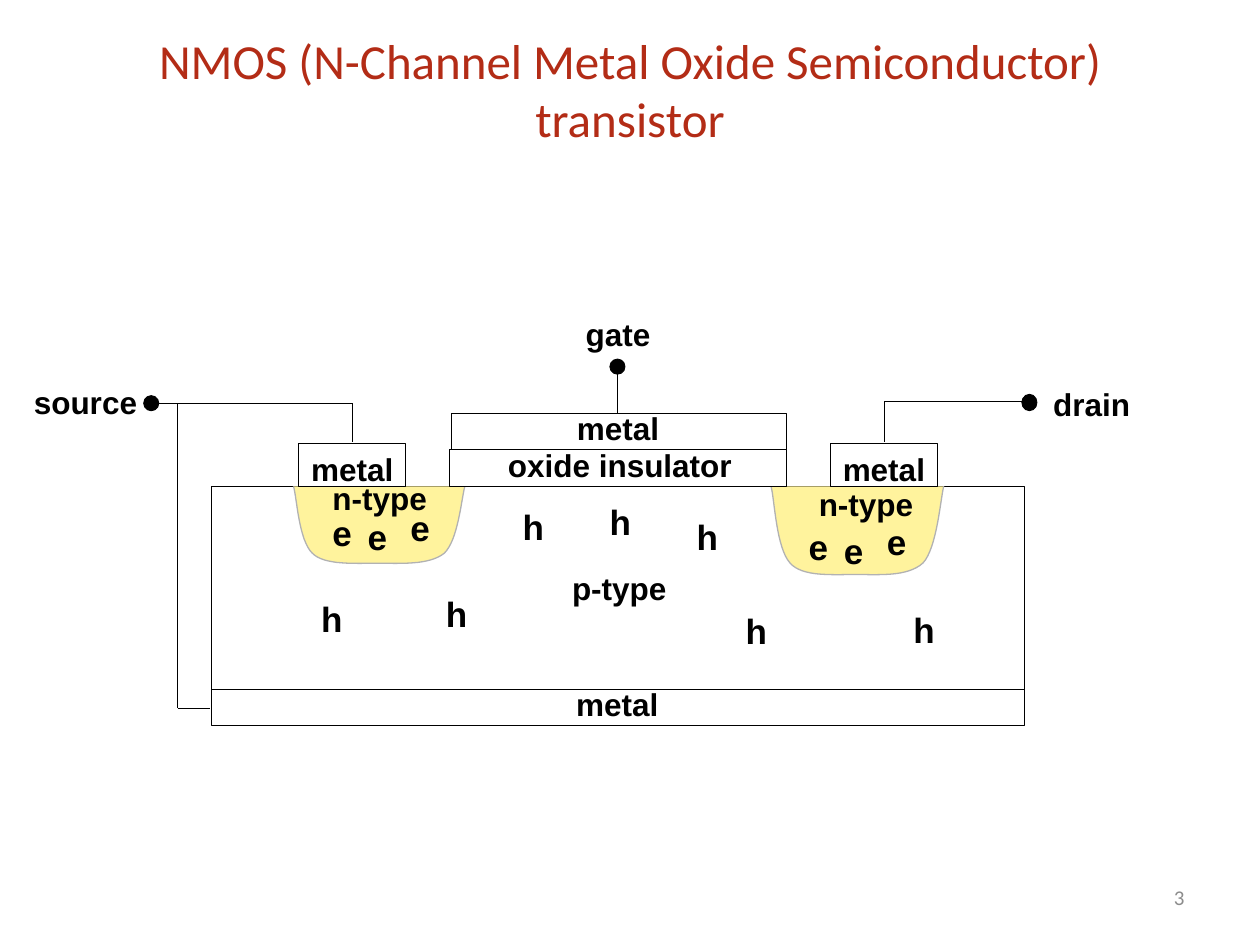
import collections
import dataclasses

import pptx
import pptx.dml.color
import pptx.enum.shapes
import pptx.enum.text
import pptx.oxml
import pptx.util
from pptx.util import Inches

SHAPES = pptx.enum.shapes.MSO_SHAPE
ALIGN = pptx.enum.text.PP_ALIGN
ANCHOR = pptx.enum.text.MSO_ANCHOR
FIT = pptx.enum.text.MSO_AUTO_SIZE


@dataclasses.dataclass(frozen=True)
class Theme:
    """Colours, fonts and sizes of the slide."""
    ink: str = "000000"
    heading: str = "B32C16"
    page: str = "8C8C8C"
    well: str = "FFF39D"
    well_edge: str = "B2B2B2"
    heading_font: str = "Calibri"
    label_font: str = "Arial"
    heading_size: float = 28
    label_size: float = 18
    carrier_size: float = 20
    page_size: float = 12
    line: float = 0.5
    edge: float = 0.75


THEME = Theme()


class Box(collections.namedtuple("Box", "left top width height")):
    """A region of the slide."""

    def inset(self, dx, dy, width, height):
        """Return a box offset by inches from this region's corner."""
        return Box(self.left + Inches(dx), self.top + Inches(dy), Inches(width), Inches(height))


def rgb(value):
    """Return a colour from its hex value."""
    return pptx.dml.color.RGBColor.from_string(value)


def apply(target, values):
    """Set each named attribute on the target."""
    for name, value in values.items():
        setattr(target, name, value)


def write(slide, box, lines, size=THEME.label_size, font=THEME.label_font, color=THEME.ink,
          bold=True, align=ALIGN.LEFT, wrap=False, anchor=ANCHOR.TOP, fit=FIT.SHAPE_TO_FIT_TEXT):
    """Place the lines as one paragraph in a text box."""
    frame = slide.shapes.add_textbox(*box).text_frame
    apply(frame, {"word_wrap": wrap, "vertical_anchor": anchor, "auto_size": fit})
    paragraph = frame.paragraphs[0]
    paragraph.alignment = align
    for index, line in enumerate(lines):
        if index:
            paragraph.add_line_break()
        run = paragraph.add_run()
        run.text = line
        apply(run.font, {"name": font, "size": pptx.util.Pt(size), "bold": bold})
        run.font.color.rgb = rgb(color)


def label(slide, box, text, align=ALIGN.CENTER):
    """Place one bold label."""
    write(slide, box, [text], align=align)


def carriers(slide, box, symbol, places):
    """Scatter one charge carrier symbol over a region."""
    for dx, dy in places:
        write(slide, box.inset(dx, dy, 0.37, 0.43), [symbol], THEME.carrier_size)


def style(shape, fill=None, edge=THEME.ink, width=THEME.line):
    """Set the fill and outline of a shape."""
    shape.shadow.inherit = False
    if fill:
        shape.fill.solid()
        shape.fill.fore_color.rgb = rgb(fill)
    else:
        shape.fill.background()
    shape.line.color.rgb = rgb(edge)
    shape.line.width = pptx.util.Pt(width)


def layer(slide, box):
    """Draw one outlined layer of material."""
    style(slide.shapes.add_shape(SHAPES.RECTANGLE, *box))


def terminal(slide, box):
    """Draw a terminal dot."""
    style(slide.shapes.add_shape(SHAPES.OVAL, *box), THEME.ink)


def wire(slide, box, points):
    """Join points of a region with straight lines."""
    places = [(box.left + Inches(x), box.top + Inches(y)) for x, y in points]
    for start, end in zip(places, places[1:]):
        lead = slide.shapes.add_connector(pptx.enum.shapes.MSO_CONNECTOR.STRAIGHT, *start, *end)
        lead.line.color.rgb = rgb(THEME.ink)
        lead.line.width = pptx.util.Pt(THEME.line)
        lead._element.spPr.append(pptx.oxml.parse_xml(
            '<a:effectLst xmlns:a="http://schemas.openxmlformats.org/drawingml/2006/main"/>'))


def well_outline(box, steps=16):
    """Return points along the rounded well, from its left lip to its right lip."""
    curves = [
        [(0, 0), (0.02, 0.15), (0.03, 0.7), (0.11, 0.87)],
        [(0.11, 0.87), (0.18, 1.03), (0.36, 1), (0.49, 1)],
        [(0.49, 1), (0.62, 1), (0.79, 1.03), (0.88, 0.87)],
        [(0.88, 0.87), (0.96, 0.7), (0.98, 0.17), (1, 0)],
    ]
    points = [(box.left, box.top)]
    for curve in curves:
        for step in range(1, steps + 1):
            t = step / steps
            weights = ((1 - t) ** 3, 3 * t * (1 - t) ** 2, 3 * t * t * (1 - t), t ** 3)
            x, y = (sum(w * p[axis] for w, p in zip(weights, curve)) for axis in (0, 1))
            points.append((round(box.left + x * box.width), round(box.top + y * box.height)))
    return points


def n_well(slide, box, name_at, electrons_at):
    """Draw an n-type well with its name and three electrons."""
    outline = well_outline(box)
    builder = slide.shapes.build_freeform(*outline[0])
    builder.add_line_segments(outline[1:], close=False)
    style(builder.convert_to_shape(), THEME.well, THEME.well_edge, THEME.edge)
    label(slide, box.inset(*name_at, 1.23, 0.4), "n-type", ALIGN.LEFT)
    x, y = electrons_at
    carriers(slide, box, "e", [(x, y), (x + 0.28, y + 0.03), (x + 0.62, y - 0.04)])


def contact(slide, box):
    """Draw a metal contact."""
    label(slide, box.inset(0, 0, 0.85, 0.4), "metal")
    layer(slide, box)


def gate_stack(slide, box):
    """Draw the gate's metal and oxide with its terminal."""
    layer(slide, box.inset(0, 0.29, 2.67, 0.29))
    label(slide, box.inset(0.36, 0.21, 1.98, 0.4), "oxide insulator")
    layer(slide, box.inset(0.01, 0, 2.66, 0.29))
    label(slide, box.inset(0.91, -0.08, 0.85, 0.4), "metal")
    wire(slide, box, [(1.33, -0.35), (1.33, 0)])
    terminal(slide, box.inset(1.27, -0.43, 0.12, 0.12))
    label(slide, box.inset(0.84, -0.83, 0.99, 0.4), "gate")


def body(slide, box):
    """Draw the p-type body and the metal below."""
    layer(slide, box)
    label(slide, box.inset(2.76, 0.61, 0.95, 0.4), "p-type")
    layer(slide, box.inset(0, 1.61, 6.45, 0.29))
    label(slide, box.inset(2.57, 1.53, 1.3, 0.4), "metal")


def source_lead(slide, box):
    """Draw the source terminal wired to its contact and the body."""
    terminal(slide, box.inset(0.97, 0.15, 0.12, 0.12))
    wire(slide, box, [(1.06, 0.21), (2.63, 0.21), (2.63, 0.52)])
    wire(slide, box, [(1.24, 0.21), (1.24, 2.63), (1.5, 2.63)])
    label(slide, box.inset(0, 0, 1.05, 0.4), "source", ALIGN.LEFT)


def drain_lead(slide, box):
    """Draw the drain terminal wired to its contact."""
    terminal(slide, box.inset(1.09, 0.12, 0.12, 0.13))
    wire(slide, box, [(1.14, 0.18), (0, 0.18), (0, 0.5)])
    label(slide, box.inset(1.24, 0, 1.12, 0.4), "drain", ALIGN.LEFT)


def heading(slide, box):
    """Write the slide title."""
    write(slide, box, ["NMOS (N-Channel Metal Oxide Semiconductor)", "transistor"],
          THEME.heading_size, THEME.heading_font, THEME.heading, False, ALIGN.CENTER,
          True, ANCHOR.MIDDLE, FIT.NONE)


def page_number(slide, box):
    """Write the page number."""
    write(slide, box, ["3"], THEME.page_size, THEME.heading_font, THEME.page, False,
          ALIGN.RIGHT, True, ANCHOR.MIDDLE, FIT.NONE)


def main():
    """Build and save the slide."""
    deck = pptx.Presentation()
    apply(deck, {"slide_width": Inches(10), "slide_height": Inches(7.5)})
    slide = deck.slides.add_slide(deck.slide_layouts[6])
    page = Box(0, 0, deck.slide_width, deck.slide_height)
    device = page.inset(1.68, 3.86, 6.45, 1.61)
    heading(slide, page.inset(0.5, 0.08, 9, 1.25))
    body(slide, device)
    n_well(slide, device.inset(0.65, 0, 1.36, 0.61), (0.21, -0.11), (0.21, 0.15))
    n_well(slide, device.inset(4.44, 0, 1.37, 0.7), (0.28, -0.06), (0.2, 0.26))
    for contact_left in (0.69, 4.91):
        contact(slide, device.inset(contact_left, -0.34, 0.85, 0.34))
    gate_stack(slide, device.inset(1.89, -0.58, 2.67, 0.58))
    source_lead(slide, page.inset(0.17, 2.99, 2.63, 2.63))
    drain_lead(slide, page.inset(7.02, 3.01, 2.36, 0.5))
    carriers(slide, device, "h", [(0.77, 0.83), (1.76, 0.79), (2.37, 0.1), (3.06, 0.06),
                                  (3.75, 0.18), (4.14, 0.93), (5.47, 0.92)])
    page_number(slide, page.inset(7.17, 6.92, 2.33, 0.4))
    deck.save("out.pptx")


if __name__ == "__main__":
    main()
